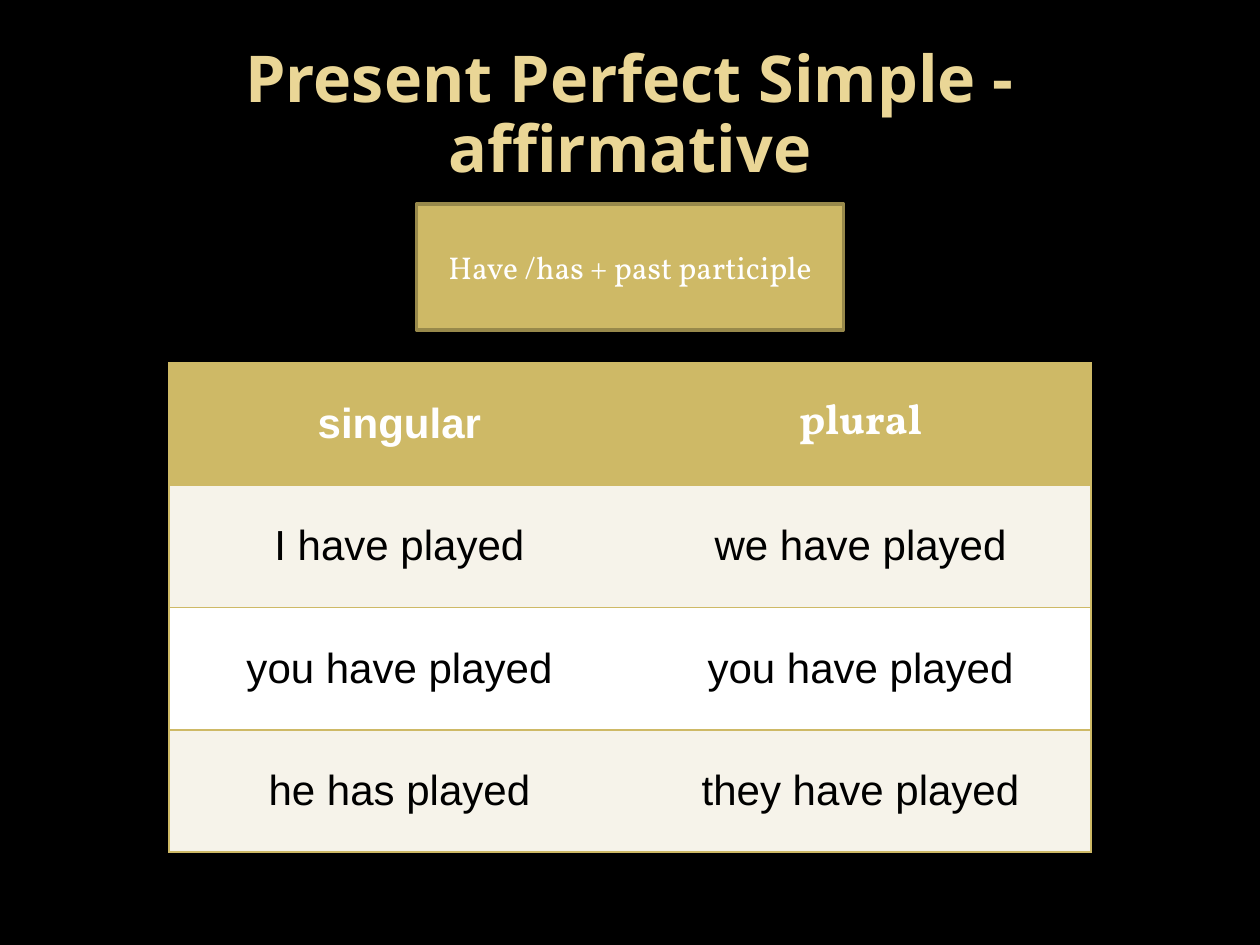
from dataclasses import dataclass

from lxml.etree import SubElement
from pptx import Presentation
from pptx.dml.color import RGBColor
from pptx.enum.shapes import MSO_SHAPE
from pptx.enum.text import MSO_ANCHOR, PP_ALIGN
from pptx.oxml.ns import qn
from pptx.util import Pt

# Content
TITLE = "Present Perfect Simple - affirmative"
RULE = "Have /has + past participle"
HEADS = [("singular", "Arial"), ("plural", "Vollkorn")]
FORMS = [
    ("I have played", "we have played"),
    ("you have played", "you have played"),
    ("he has played", "they have played"),
]

# Layout in points: left, top, width, height
WIDE, HIGH = 720, 540
HEAD_BOX = (36, 21.6, 648, 90)
RULE_BOX = (238, 116.5, 244, 72)
GRID_BOX = (96.5, 207.4, 527, 279.6)


@dataclass(frozen=True)
class Theme:
    back: str = "000000"
    title: str = "EAD696"
    gold: str = "CEB966"
    edge: str = "98894B"
    band: str = "F6F3EA"
    light: str = "FFFFFF"
    dark: str = "000000"
    title_size: float = 36.9
    rule_size: float = 18
    cell_size: float = 24


LOOK = Theme()


def paint(fill, color):
    fill.solid()
    fill.fore_color.rgb = RGBColor.from_string(color)


def write(frame, text, face, size, color, bold=False):
    frame.word_wrap = True
    para = frame.paragraphs[0]
    para.alignment = PP_ALIGN.CENTER
    run = para.add_run()
    run.text = text
    font = run.font
    font.name, font.size, font.bold = face, Pt(size), bold
    font.color.rgb = RGBColor.from_string(color)
    return para


def border(cell, side, color=None):
    line = SubElement(cell._tc.get_or_add_tcPr(), qn(f"a:ln{side}"), w=str(Pt(1)))
    if color:
        fill = SubElement(line, qn("a:solidFill"))
        SubElement(fill, qn("a:srgbClr"), val=color)
    else:
        SubElement(line, qn("a:noFill"))


def main():
    deck = Presentation()
    deck.slide_width, deck.slide_height = Pt(WIDE), Pt(HIGH)
    slide = deck.slides.add_slide(deck.slide_layouts[6])
    paint(slide.background.fill, LOOK.back)

    # Title
    head = slide.shapes.add_textbox(*map(Pt, HEAD_BOX)).text_frame
    head.vertical_anchor = MSO_ANCHOR.MIDDLE
    para = write(head, TITLE, "Noto Sans", LOOK.title_size, LOOK.title, True)
    para.line_spacing = 0.9

    # Table: gold outline and row lines, no line between the columns
    rows = [HEADS] + [[(text, "Arial") for text in pair] for pair in FORMS]
    table = slide.shapes.add_table(len(rows), len(HEADS), *map(Pt, GRID_BOX)).table
    for r, row in enumerate(rows):
        top = r == 0
        shade = LOOK.gold if top else LOOK.band if r % 2 else LOOK.light
        for c, (text, face) in enumerate(row):
            cell = table.cell(r, c)
            cell.vertical_anchor = MSO_ANCHOR.MIDDLE
            border(cell, "L", LOOK.gold if c == 0 else None)
            border(cell, "R", LOOK.gold if c == len(row) - 1 else None)
            border(cell, "T", LOOK.gold)
            border(cell, "B", LOOK.gold)
            paint(cell.fill, shade)
            ink = LOOK.light if top else LOOK.dark
            write(cell.text_frame, text, face, LOOK.cell_size, ink, top)

    # Rule box
    box = slide.shapes.add_shape(MSO_SHAPE.RECTANGLE, *map(Pt, RULE_BOX))
    box.shadow.inherit = False
    paint(box.fill, LOOK.gold)
    paint(box.line.fill, LOOK.edge)
    box.line.width = Pt(2)
    box.text_frame.vertical_anchor = MSO_ANCHOR.MIDDLE
    write(box.text_frame, RULE, "Vollkorn", LOOK.rule_size, LOOK.light)

    deck.save("out.pptx")


if __name__ == "__main__":
    main()
